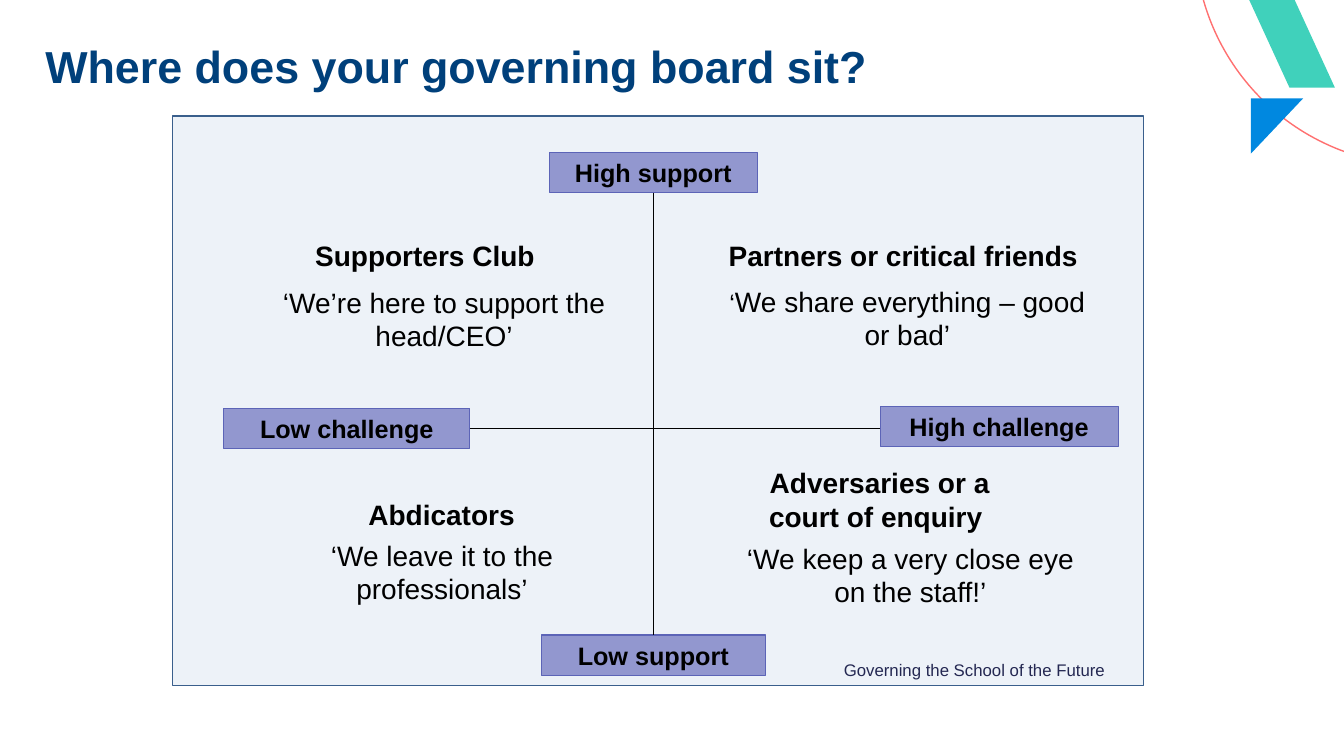
"""Build a slide placing governing boards on a support and challenge grid."""
from dataclasses import dataclass

from lxml.etree import SubElement
from pptx import Presentation
from pptx.dml.color import RGBColor as Color
from pptx.enum.shapes import MSO_CONNECTOR as Connector, MSO_SHAPE as Shape
from pptx.enum.text import MSO_ANCHOR as Anchor, PP_ALIGN as Align
from pptx.oxml.ns import qn
from pptx.util import Pt

PX = 9144


@dataclass(frozen=True)
class Theme:
    font: str = "Arial"
    title: str = "00407B"
    text: str = "000000"
    footer: str = "242852"
    panel: str = "4F81BD"
    panel_line: str = "3A5F8C"
    label: str = "9297CF"
    label_line: str = "5C64B7"
    ring: str = "FF7070"
    triangle: str = "0088E0"
    band: str = "40D1BB"
    title_size: int = 32
    quadrant_size: int = 20
    label_size: int = 18
    footer_size: int = 12


theme = Theme()


def add_shape(kind, box, fill=None, line=None, width=1):
    shape = slide.shapes.add_shape(kind, *(value * PX for value in box))
    shape.shadow.inherit = False
    if fill:
        shape.fill.solid()
        shape.fill.fore_color.rgb = Color.from_string(fill)
    else:
        shape.fill.background()
    if line:
        shape.line.color.rgb = Color.from_string(line)
        shape.line.width = Pt(width)
    else:
        shape.line.fill.background()
    return shape


def write(text, box=None, shape=None, size=theme.quadrant_size, color=theme.text,
          bold=False, align=Align.CENTER, spacing=None, inset=True, lead="",
          anchor=Anchor.TOP):
    shape = shape or slide.shapes.add_textbox(*(value * PX for value in box))
    frame = shape.text_frame
    frame.word_wrap = True
    frame.vertical_anchor = anchor
    if not inset:
        frame.margin_left = frame.margin_right = 0
        frame.margin_top = frame.margin_bottom = 0
    paragraph = frame.paragraphs[0]
    paragraph.alignment = align
    if spacing:
        paragraph.line_spacing = spacing
    for words, points in ((lead, theme.label_size), (text, size)):
        if words:
            run = paragraph.add_run()
            run.text = words
            run.font.name = theme.font
            run.font.size = Pt(points)
            run.font.bold = bold
            run.font.color.rgb = Color.from_string(color)


presentation = Presentation()
presentation.slide_width = 1333 * PX
presentation.slide_height = 750 * PX
slide = presentation.slides.add_slide(presentation.slide_layouts[6])

ring = add_shape(Shape.ARC, (1185, -287, 451, 451), line=theme.ring)
ring.adjustments[0] = 108 * 0.6
ring.adjustments[1] = 165 * 0.6
triangle = add_shape(Shape.RIGHT_TRIANGLE, (1239, 99, 55, 52), theme.triangle)
triangle.rotation = 90
band = add_shape(Shape.PARALLELOGRAM, (1239, 0, 85, 87), theme.band)
band.adjustments[0] = 0.47
band._element.spPr.find(qn("a:xfrm")).set("flipH", "1")

panel = add_shape(Shape.RECTANGLE, (171, 115, 963, 565), theme.panel, theme.panel_line)
panel_color = panel._element.spPr.find(qn("a:solidFill"))[0]
SubElement(panel_color, qn("a:alpha"), val="10000")

write("Where does your governing board sit?", (45, 44, 1140, 67),
      size=theme.title_size, color=theme.title, bold=True, align=Align.LEFT,
      spacing=0.9, inset=False)

labels = {}
for name, box in (
    ("High support", (545, 151, 206, 40)),
    ("Low support", (537, 630, 222, 40)),
    ("High challenge", (873, 403, 236, 40)),
    ("Low challenge", (222, 405, 244, 40)),
):
    labels[name] = add_shape(Shape.RECTANGLE, box, theme.label, theme.label_line, 0.75)
    write(name, shape=labels[name], size=theme.label_size, bold=True,
          anchor=Anchor.MIDDLE)

support_axis = slide.shapes.add_connector(
    Connector.STRAIGHT, 648 * PX, 191 * PX, 648 * PX, 630 * PX)
support_axis.begin_connect(labels["High support"], 2)
support_axis.end_connect(labels["Low support"], 0)
challenge_axis = slide.shapes.add_connector(
    Connector.STRAIGHT, 466 * PX, 425 * PX, 873 * PX, 425 * PX)
challenge_axis.begin_connect(labels["Low challenge"], 3)
for axis in (support_axis, challenge_axis):
    axis.line.color.rgb = Color.from_string(theme.text)
    axis.line.width = Pt(0.75)
    SubElement(axis._element.spPr, qn("a:effectLst"))

for heading, heading_box, lead, quote, quote_box in (
    ("Partners or critical friends", (711, 232, 370, 44),
     "‘", "We share everything – good or bad’", (711, 277, 378, 77)),
    ("Supporters Club", (276, 232, 291, 44),
     "", "‘We’re here to support the head/CEO’", (267, 278, 347, 77)),
    ("Abdicators", (311, 489, 254, 44),
     "", "‘We leave it to the professionals’", (273, 529, 331, 77)),
    ("Adversaries or a court of enquiry ", (730, 457, 285, 77),
     "", "‘We keep a very close eye on the staff!’", (722, 532, 362, 77)),
):
    write(heading, heading_box, bold=True)
    write(quote, quote_box, lead=lead)

write("Governing the School of the Future", (827, 650, 291, 30),
      size=theme.footer_size, color=theme.footer, align=Align.LEFT)

presentation.save("out.pptx")
